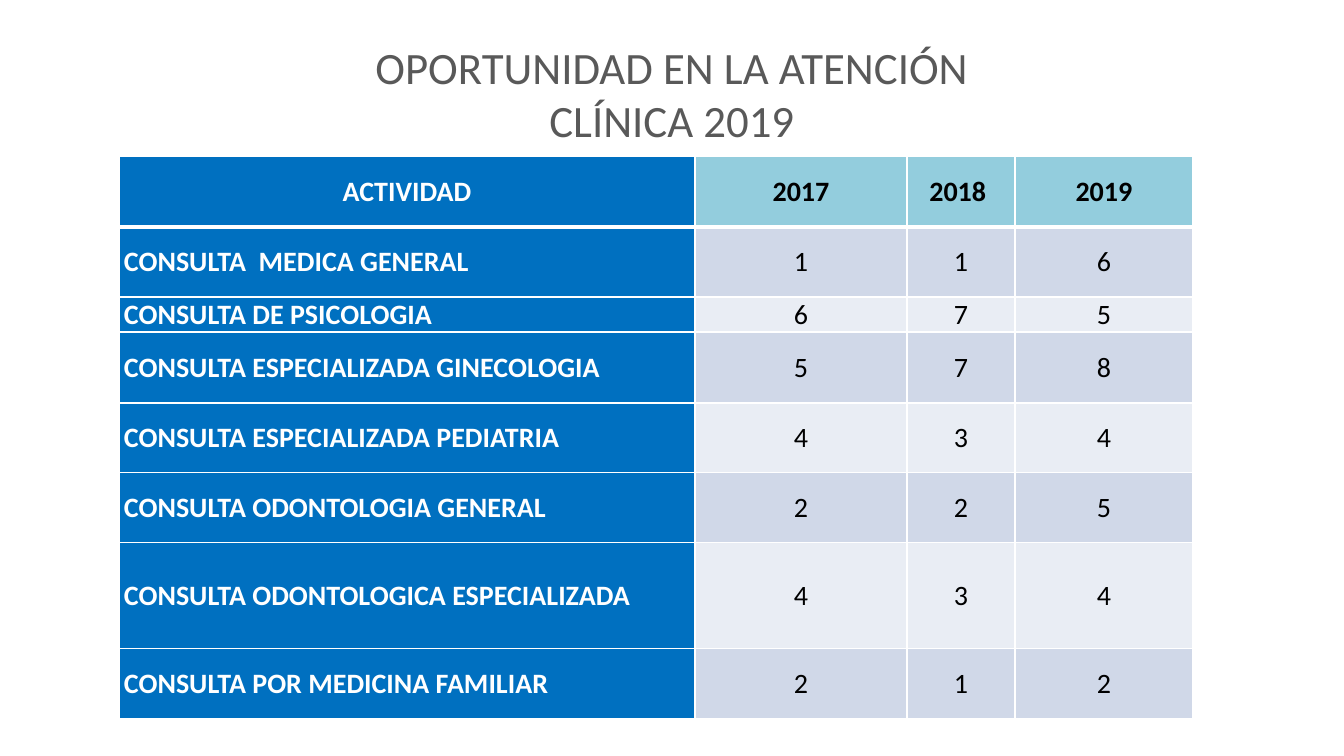
from copy import deepcopy

from lxml import etree
from pptx import Presentation
from pptx import util as u
from pptx.dml.color import RGBColor
from pptx.enum import text
from pptx.oxml.ns import qn

WHITE = RGBColor(0xFF, 0xFF, 0xFF)
BLACK = RGBColor(0x00, 0x00, 0x00)
GREY = RGBColor(0x59, 0x59, 0x59)
BLUE = RGBColor(0x00, 0x70, 0xC0)
AQUA = RGBColor(0x93, 0xCD, 0xDD)
BANDS = (RGBColor(0xD0, 0xD8, 0xE8), RGBColor(0xE9, 0xED, 0xF4))

TITLE_LINES = ("OPORTUNIDAD EN LA ATENCIÓN", "CLÍNICA 2019")
COLUMN_WIDTHS = (576, 212, 108, 178)
ROW_HEIGHTS = (71, 70, 35, 71, 70, 70, 106, 70)
ACTIVITY_ROWS = (
    ("ACTIVIDAD", "2017", "2018 ", "2019"),
    ("CONSULTA  MEDICA GENERAL", 1, 1, 6),
    ("CONSULTA DE PSICOLOGIA", 6, 7, 5),
    ("CONSULTA ESPECIALIZADA GINECOLOGIA", 5, 7, 8),
    ("CONSULTA ESPECIALIZADA PEDIATRIA", 4, 3, 4),
    ("CONSULTA ODONTOLOGIA GENERAL", 2, 2, 5),
    ("CONSULTA ODONTOLOGICA ESPECIALIZADA", 4, 3, 4),
    ("CONSULTA POR MEDICINA FAMILIAR", 2, 1, 2),
)


def px(length):
    """Turn pixels (100.8 to the inch) into EMU."""
    return u.Emu(round(length * 914400 / 100.8))


def set_all(target, values):
    for name, value in values.items():
        setattr(target, name, value)


class SlideBuilder:
    font_name = "Calibri"

    def __init__(self, deck):
        self.page = deck.slides.add_slide(deck.slide_layouts[5])

    def span(self, para, words, size, color, bold=False):
        span = para.add_run()
        span.text = words
        set_all(span.font, dict(name=self.font_name, size=u.Pt(size), bold=bold))
        span.font.color.rgb = color
        return span

    def title(self, lines, left, top, width, height):
        box = self.page.shapes.title
        set_all(box, dict(left=px(left), top=px(top), width=px(width), height=px(height)))
        set_all(box.text_frame, dict(word_wrap=True, auto_size=text.MSO_AUTO_SIZE.NONE,
                                     vertical_anchor=text.MSO_ANCHOR.MIDDLE))
        para = box.text_frame.paragraphs[0]
        para.alignment = text.PP_ALIGN.CENTER
        for index, line in enumerate(lines):
            if index:
                para.add_line_break()
            span = self.span(para, line, 32, GREY)
        for line_break in para._p.findall(qn("a:br")):
            line_break.append(deepcopy(span.font._element))

    def table(self, rows, left, top, widths, heights):
        frame = self.page.shapes.add_table(len(rows), len(widths), px(left), px(top),
                                           px(sum(widths)), px(sum(heights)))
        table = frame.table
        set_all(table, dict(first_row=False, horz_banding=False))
        for column, width in zip(table.columns, widths):
            column.width = px(width)
        for row, height in zip(table.rows, heights):
            row.height = px(height)
        for r, values in enumerate(rows):
            for c, value in enumerate(values):
                self.cell(table.cell(r, c), r, c, str(value))

    def cell(self, cell, r, c, words):
        header, label = r == 0, c == 0
        side = 1 if c == 3 and not header else 5
        set_all(cell, dict(margin_left=px(side), margin_right=px(side), margin_top=0,
                           margin_bottom=0, vertical_anchor=text.MSO_ANCHOR.MIDDLE))
        cell.fill.solid()
        cell.fill.fore_color.rgb = BLUE if label else AQUA if header else BANDS[(r - 1) % 2]
        para = cell.text_frame.paragraphs[0]
        para.alignment = text.PP_ALIGN.CENTER if header or not label else text.PP_ALIGN.LEFT
        self.span(para, words, 20, WHITE if label else BLACK, header or label)
        self.borders(cell, top=3 if r == 1 else 1, bottom=3 if header else 1)

    def borders(self, cell, top, bottom):
        """Draw white borders; the weights of top and bottom are in points."""
        properties = cell._tc.get_or_add_tcPr()
        weights = dict(lnL=1, lnR=1, lnT=top, lnB=bottom)
        for index, (tag, weight) in enumerate(weights.items()):
            line = etree.Element(qn("a:" + tag), w=str(u.Pt(weight)))
            fill = etree.SubElement(line, qn("a:solidFill"))
            etree.SubElement(fill, qn("a:srgbClr"), val=str(WHITE))
            properties.insert(index, line)


def main():
    deck = Presentation()
    set_all(deck, dict(slide_width=px(1344), slide_height=px(756)))
    builder = SlideBuilder(deck)
    builder.title(TITLE_LINES, 67, 30, 1210, 126)
    builder.table(ACTIVITY_ROWS, 119, 156, COLUMN_WIDTHS, ROW_HEIGHTS)
    deck.save("out.pptx")


if __name__ == "__main__":
    main()
